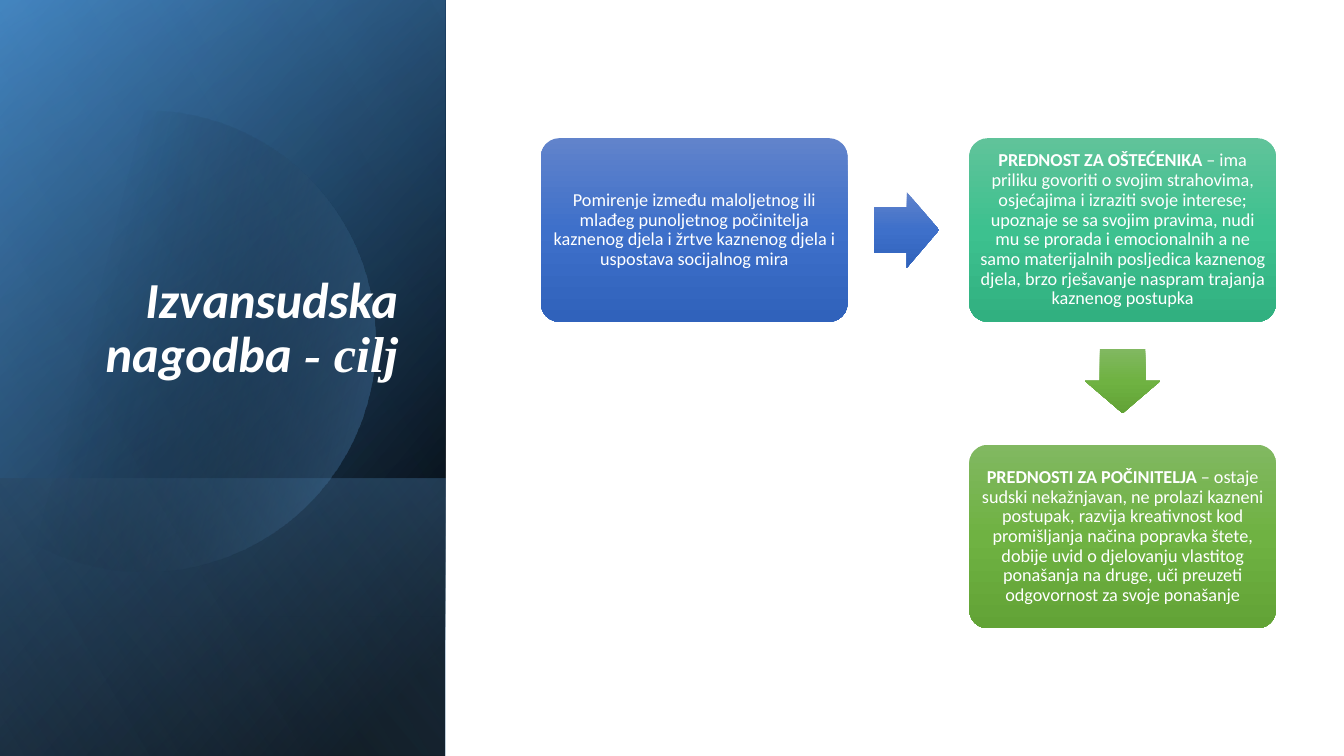
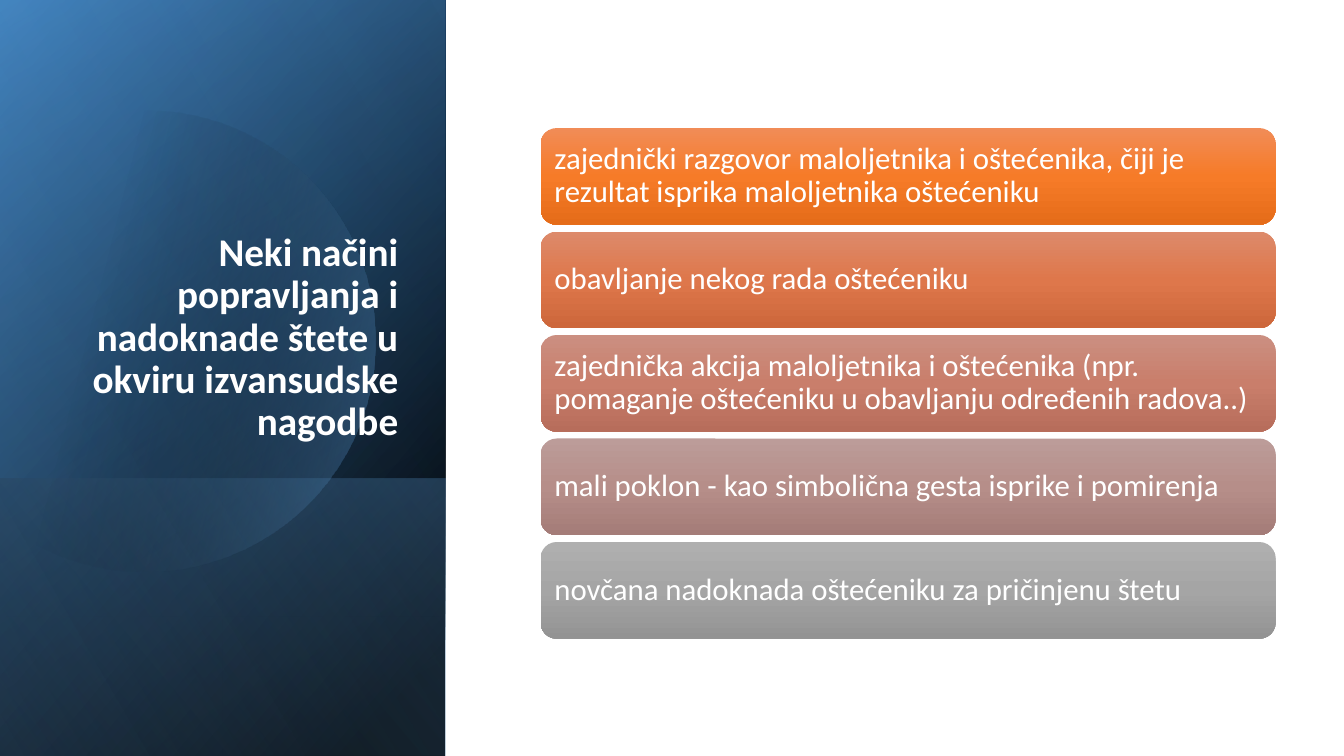
from lxml import etree
from pptx import Presentation
from pptx.dml.color import RGBColor
from pptx.enum.shapes import MSO_SHAPE
from pptx.enum.text import MSO_ANCHOR, MSO_AUTO_SIZE, PP_ALIGN
from pptx.oxml.ns import qn
from pptx.util import Emu, Pt

RECTANGLE = MSO_SHAPE.RECTANGLE
ROUNDED = MSO_SHAPE.ROUNDED_RECTANGLE
RIGHT_ARROW = MSO_SHAPE.RIGHT_ARROW
DOWN_ARROW = MSO_SHAPE.DOWN_ARROW
LEFT, CENTER, RIGHT = PP_ALIGN.LEFT, PP_ALIGN.CENTER, PP_ALIGN.RIGHT
MIDDLE, BOTTOM = MSO_ANCHOR.MIDDLE, MSO_ANCHOR.BOTTOM
NO_AUTOFIT = MSO_AUTO_SIZE.NONE

COLUMNS, ROWS = 160, 90
CELL = 76200
FONT, SERIF = "Calibri", "Times New Roman"
WHITE = "FFFFFF"

BLUE = ("6183CB", "3E70CA", "3062BB")
TEAL = ("60C39A", "3DC18F", "31B080")
GREEN = ("81B861", "6FB242", "62A336")

PANEL_WIDTH = 53
PANEL_BASE = [
    (0, ROWS, [(8, "000000", 100), (100, "2E75B6", 100)], 50),
    (0, ROWS, [(0, "000000", 0), (99, "5B9BD5", 46)], 30),
    (57, 33, [(2, "5B9BD5", 29), (100, "000000", 30)], 130),
]
PANEL_GLAZE = (0, ROWS, [(0, "000000", 0), (99, "9DC3E6", 11)], 120)
DISC_STOPS = [(29, "000000", 0), (100, "5B9BD5", 43)]
DISC_CURVES = [
    [(17.9, 13.2), (29.5, 13.4), (40.2, 21.2), (43.6, 33)],
    [(43.6, 33), (47.8, 47.6), (39.4, 62.8), (24.8, 67)],
    [(24.8, 67), (15.7, 69.6), (6.4, 67.3), (0, 62)],
    [(0, 19.3), (2.7, 17), (6, 15.3), (9.6, 14.3)],
    [(9.6, 14.3), (12.4, 13.6), (15.1, 13.2), (17.9, 13.2)],
]
CURVE_STEPS = 20

BOX_LEFT, BOX_TOP, BOX_WIDTH, BOX_HEIGHT = 64.4, 16.45, 36.5, 21.85
BOX_COLUMN, BOX_ROW = 51, 36.5
ARROW_LENGTH, ARROW_BREADTH, ARROW_GAP = 7.7, 9, 3.2
BOXES = [
    (0, 0, BLUE, "", "Pomirenje između maloljetnog ili mlađeg punoljetnog počinitelja "
     "kaznenog djela i žrtve kaznenog djela i uspostava socijalnog mira"),
    (1, 0, TEAL, "PREDNOST ZA OŠTEĆENIKA",
     " – ima priliku govoriti o svojim strahovima, osjećajima i izraziti svoje interese; "
     "upoznaje se sa svojim pravima, nudi mu se prorada i emocionalnih a ne samo "
     "materijalnih posljedica kaznenog djela, brzo rješavanje naspram trajanja "
     "kaznenog postupka"),
    (1, 1, GREEN, "PREDNOSTI ZA POČINITELJA",
     " – ostaje sudski nekažnjavan, ne prolazi kazneni postupak, razvija kreativnost kod "
     "promišljanja načina popravka štete, dobije uvid o djelovanju vlastitog ponašanja "
     "na druge, uči preuzeti odgovornost za svoje ponašanje"),
]

BAR_LEFT, BAR_TOP, BAR_WIDTH, BAR_HEIGHT, BAR_PITCH = 64.35, 15.25, 87.5, 11.5, 12.32
BARS = [
    (("F18C57", "F67B28", "E56C19"),
     "zajednički razgovor maloljetnika i oštećenika, čiji je rezultat isprika "
     "maloljetnika oštećeniku"),
    (("DD8A6A", "DE774B", "CD673B"), "obavljanje nekog rada oštećeniku"),
    (("CB8F81", "C97E6B", "B76D5B"),
     "zajednička akcija maloljetnika i oštećenika (npr. pomaganje oštećeniku u "
     "obavljanju određenih radova..)"),
    (("BC9C99", "B68E89", "A47C78"), "mali poklon - kao simbolična gesta isprike i pomirenja"),
    (("AFAFAF", "A5A5A5", "939393"), "novčana nadoknada oštećeniku za pričinjenu štetu"),
]


def cells(count):
    """Convert a number of grid cells to a length."""
    return Emu(round(count * CELL))


def color(hex_value):
    """Turn a hex string into a colour."""
    return RGBColor.from_string(hex_value)


def paint(shape, stops, angle):
    """Fill a shape with a gradient of (position, colour, opacity) stops, without line or shadow."""
    shape.shadow.inherit = False
    shape.line.fill.background()
    shape.fill.gradient()
    gradient = shape.element.spPr.find(qn("a:gradFill"))
    for child in list(gradient):
        gradient.remove(child)
    gradient.set("rotWithShape", "1")
    stop_list = etree.SubElement(gradient, qn("a:gsLst"))
    for position, hex_value, opacity in stops:
        stop = etree.SubElement(stop_list, qn("a:gs"), pos=str(position * 1000))
        tint = etree.SubElement(stop, qn("a:srgbClr"), val=str(color(hex_value)))
        if opacity < 100:
            etree.SubElement(tint, qn("a:alpha"), val=str(opacity * 1000))
    etree.SubElement(gradient, qn("a:lin"), ang=str(angle * 60000), scaled="0")


def add_block(slide, kind, left, top, width, height, shades):
    """Add a preset shape shaded from top to bottom."""
    shape = slide.shapes.add_shape(kind, *map(cells, (left, top, width, height)))
    paint(shape, [(50 * index, shade, 100) for index, shade in enumerate(shades)], 90)
    return shape


def write(shape, runs, size, alignment, anchor):
    """Write one paragraph of (text, bold) runs and return it."""
    frame = shape.text_frame
    frame.word_wrap = True
    frame.auto_size = NO_AUTOFIT
    frame.vertical_anchor = anchor
    paragraph = frame.paragraphs[0]
    paragraph.alignment = alignment
    paragraph.line_spacing = 0.9
    paragraph.font.name = FONT
    paragraph.font.size = Pt(size)
    paragraph.font.color.rgb = color(WHITE)
    for text, bold in runs:
        run = paragraph.add_run()
        run.text = text
        run.font.bold = bold
    return paragraph


def set_margins(shape, margin):
    """Give all four text margins of a shape the same width."""
    frame = shape.text_frame
    frame.margin_left = frame.margin_right = cells(margin)
    frame.margin_top = frame.margin_bottom = cells(margin)


def add_layer(slide, top, height, stops, angle):
    """Add a mirrored, quarter-turned gradient layer across the side panel."""
    left = (PANEL_WIDTH - height) / 2
    turned_top = top + (height - PANEL_WIDTH) / 2
    layer = slide.shapes.add_shape(
        RECTANGLE, *map(cells, (left, turned_top, height, PANEL_WIDTH)))
    layer.rotation = 90
    layer.element.spPr.find(qn("a:xfrm")).set("flipH", "1")
    paint(layer, stops, angle)


def curve_points(curve):
    """Return evenly stepped points along a cubic curve."""
    points = []
    for step in range(CURVE_STEPS + 1):
        share = step / CURVE_STEPS
        rest = 1 - share
        weights = (rest ** 3, 3 * rest ** 2 * share, 3 * rest * share ** 2, share ** 3)
        points.append(tuple(
            cells(sum(weight * value for weight, value in zip(weights, axis)))
            for axis in zip(*curve)))
    return points


def add_disc(slide):
    """Add the translucent disc cut off by the slide's left edge."""
    points = [point for curve in DISC_CURVES for point in curve_points(curve)]
    builder = slide.shapes.build_freeform(*points[0], scale=1.0)
    builder.add_line_segments(points[1:], close=True)
    paint(builder.convert_to_shape(), DISC_STOPS, 14)


def add_panel_slide(presentation, runs, size):
    """Add a slide with the side panel and its title; return slide and title."""
    slide = presentation.slides.add_slide(presentation.slide_layouts[5])
    for layer in PANEL_BASE:
        add_layer(slide, *layer)
    add_disc(slide)
    add_layer(slide, *PANEL_GLAZE)
    title = slide.shapes.title
    title.left, title.top, title.width, title.height = map(cells, (7.7, 22.1, 40.9, 31.4))
    write(title, runs, size, RIGHT, BOTTOM)
    slide.shapes.element.append(title.element)
    return slide, title


def add_goal_slide(presentation):
    """Add the slide on the goal of the settlement, with its flow of boxes."""
    slide, title = add_panel_slide(
        presentation, [("Izvansudska nagodba", True), (" - cilj", True)], 36)
    title.text_frame.margin_bottom = cells(7.8)
    paragraph = title.text_frame.paragraphs[0]
    paragraph.font.italic = True
    paragraph.runs[1].font.name = SERIF
    for column, row, shades, lead, text in BOXES:
        box = add_block(slide, ROUNDED, BOX_LEFT + column * BOX_COLUMN,
                        BOX_TOP + row * BOX_ROW, BOX_WIDTH, BOX_HEIGHT, shades)
        box.adjustments[0] = 0.1
        set_margins(box, 0.6)
        runs = [(lead, True), (text, False)] if lead else [(text, False)]
        write(box, runs, 13, CENTER, MIDDLE)
    across = add_block(slide, RIGHT_ARROW, BOX_LEFT + BOX_WIDTH + ARROW_GAP,
                       BOX_TOP + (BOX_HEIGHT - ARROW_BREADTH) / 2,
                       ARROW_LENGTH, ARROW_BREADTH, BLUE)
    down = add_block(slide, DOWN_ARROW,
                     BOX_LEFT + BOX_COLUMN + (BOX_WIDTH - ARROW_BREADTH) / 2,
                     BOX_TOP + BOX_HEIGHT + ARROW_GAP,
                     ARROW_BREADTH, ARROW_LENGTH, GREEN)
    for arrow in (across, down):
        arrow.adjustments[0] = 0.6


def add_ways_slide(presentation):
    """Add the slide listing the ways of making amends."""
    slide, _ = add_panel_slide(
        presentation,
        [("Neki načini popravljanja i nadoknade štete u okviru izvansudske nagodbe", True)], 28)
    for index, (shades, text) in enumerate(BARS):
        bar = add_block(slide, ROUNDED, BAR_LEFT, BAR_TOP + index * BAR_PITCH,
                        BAR_WIDTH, BAR_HEIGHT, shades)
        set_margins(bar, 1.1)
        write(bar, [(text, False)], 22, LEFT, MIDDLE)


def main():
    """Build and save the presentation."""
    presentation = Presentation()
    presentation.slide_width = cells(COLUMNS)
    presentation.slide_height = cells(ROWS)
    add_goal_slide(presentation)
    add_ways_slide(presentation)
    presentation.save("out.pptx")


if __name__ == "__main__":
    main()
